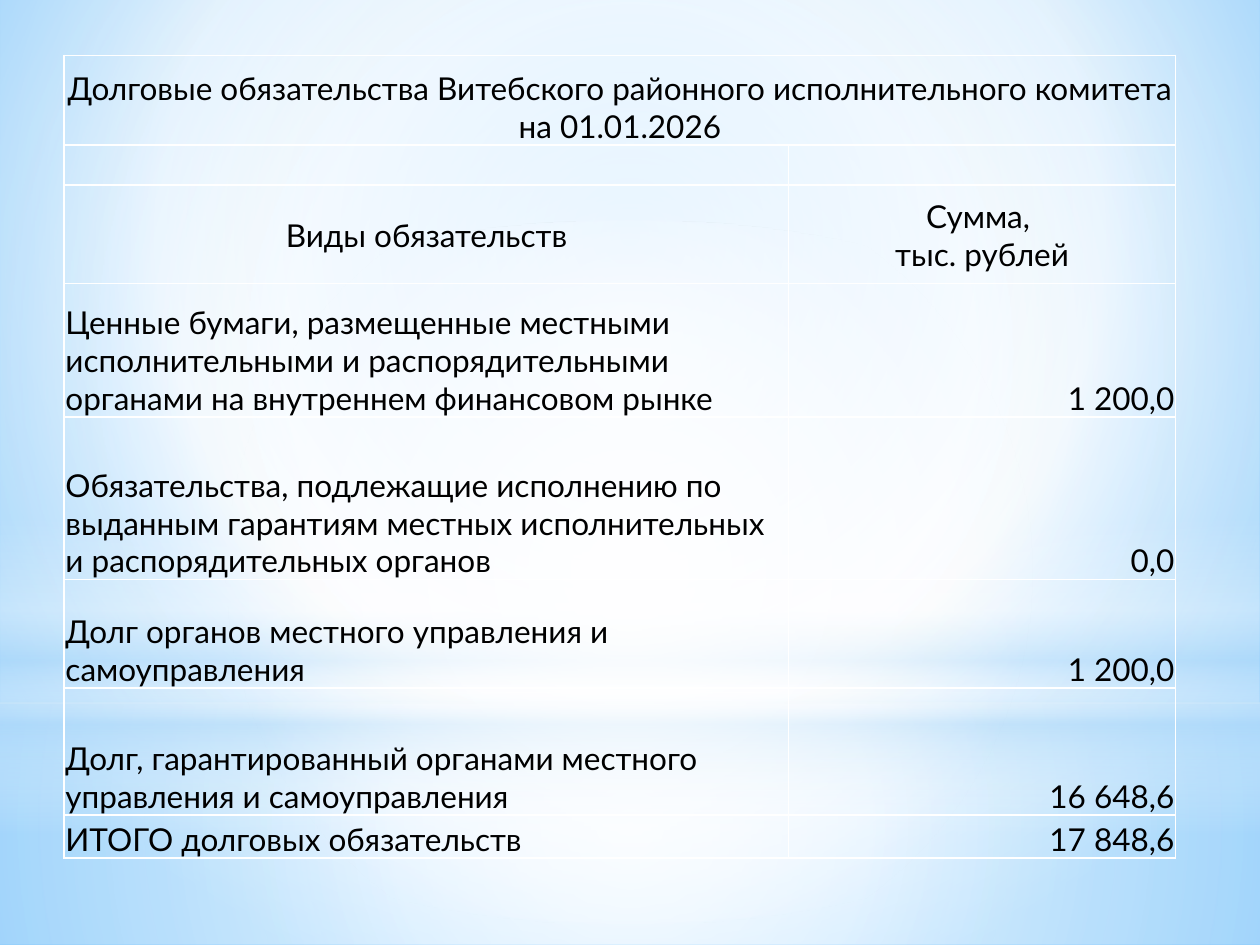
from dataclasses import dataclass

import pptx
import pptx.dml.color
import pptx.enum.shapes
import pptx.enum.text
import pptx.oxml
import pptx.oxml.ns
import pptx.util

PX = 9144  # 100 px to the inch
HUES = {"white": "FFFFFF", "pale": "B4DCFA", "sky": "9ED5FF", "deep": "5BB9FF", "ink": "000000"}
SHAPE = pptx.enum.shapes.MSO_SHAPE
ALIGN = pptx.enum.text.PP_ALIGN
ANCHOR = pptx.enum.text.MSO_ANCHOR
NS = pptx.oxml.ns.nsdecls("a")
MID = (50, 50, 50, 50)


@dataclass
class Stop:
    pos: int
    hue: str
    alpha: int = 100


@dataclass
class Glow:
    kind: int
    top: int
    height: int
    stops: list[Stop]
    focus: tuple[int, ...] | None = MID


@dataclass
class Row:
    height: int
    texts: tuple[str, ...]
    aligns: tuple = (ALIGN.LEFT, ALIGN.RIGHT)
    anchor: int = ANCHOR.BOTTOM


BACK = [Stop(0, "sky"), Stop(60, "white"), Stop(100, "deep")]
GLOWS = [
    Glow(SHAPE.RECTANGLE, 558, 192,
         [Stop(0, "white", 91), Stop(37, "white", 76), Stop(100, "pale", 79)]),
    Glow(SHAPE.RECTANGLE, 0, 558,
         [Stop(0, "white", 89), Stop(48, "white", 62), Stop(100, "pale", 79)]),
    Glow(SHAPE.RECTANGLE, 412, 250,
         [Stop(0, "white", 0), Stop(29, "white", 30), Stop(45, "pale", 40),
          Stop(55, "white", 26), Stop(65, "pale", 60), Stop(100, "white", 0)], None),
    Glow(SHAPE.OVAL, 175, 558, [Stop(0, "white"), Stop(56, "white", 0)]),
]
CENTRE = (ALIGN.CENTER, ALIGN.CENTER)
COLS = (575, 307)
ROWS = [
    Row(71, ("Долговые обязательства Витебского районного исполнительного комитета "
             "на 01.01.2026", ""), CENTRE),
    Row(32, ("", "")),
    Row(78, ("Виды обязательств", "Сумма, \nтыс. рублей"), CENTRE, ANCHOR.MIDDLE),
    Row(106, ("Ценные бумаги, размещенные местными исполнительными и распорядительными "
              "органами на внутреннем финансовом рынке", "1 200,0")),
    Row(129, ("Обязательства, подлежащие исполнению по выданным гарантиям местных "
              "исполнительных и распорядительных органов", "0,0")),
    Row(86, ("Долг органов местного управления и самоуправления", "1 200,0")),
    Row(101, ("Долг, гарантированный органами местного управления и самоуправления",
              "16 648,6")),
    Row(34, ("ИТОГО долговых обязательств", "17 848,6")),
]
FONT = {"name": "Lato", "size": pptx.util.Pt(18), "bold": False}
CELL = {"margin_left": PX, "margin_right": PX, "margin_top": PX, "margin_bottom": 0}


def blend(fill, stops: list[Stop], focus: tuple[int, ...] | None) -> None:
    """Give a fill a gradient: round about the focus, or downward without one."""
    fill.gradient()
    grad = fill._fill._gradFill
    marks = "".join(
        f'<a:gs pos="{s.pos * 1000}"><a:srgbClr val="{HUES[s.hue]}">'
        f'<a:alpha val="{s.alpha * 1000}"/></a:srgbClr></a:gs>' for s in stops)
    if focus:
        sides = " ".join(f'{side}="{n * 1000}"' for side, n in zip("ltrb", focus))
        way = f'<a:path path="circle"><a:fillToRect {sides}/></a:path>'
    else:
        way = '<a:lin ang="5400000" scaled="0"/>'
    new = pptx.oxml.parse_xml(
        f'<a:gradFill {NS} rotWithShape="1"><a:gsLst>{marks}</a:gsLst>{way}</a:gradFill>')
    grad.getparent().replace(grad, new)


def shine(slide, glow: Glow) -> None:
    shape = slide.shapes.add_shape(glow.kind, 0, glow.top * PX, 1000 * PX, glow.height * PX)
    shape.shadow.inherit = False
    shape.line.fill.background()
    blend(shape.fill, glow.stops, glow.focus)


def frame(cell) -> None:
    """Draw thin white borders round a cell and leave it unfilled."""
    props = cell._tc.get_or_add_tcPr()
    for side in ("lnL", "lnR", "lnT", "lnB"):
        props.append(pptx.oxml.parse_xml(
            f'<a:{side} {NS} w="12700"><a:solidFill><a:srgbClr val="{HUES["white"]}"/>'
            f'</a:solidFill></a:{side}>'))
    cell.fill.background()


def write(cell, text: str, align: int, anchor: int) -> None:
    for key, value in CELL.items():
        setattr(cell, key, value)
    cell.vertical_anchor = anchor
    para = cell.text_frame.paragraphs[0]
    para.text = text
    para.alignment = align
    for part in (para, *para.runs):
        for key, value in FONT.items():
            setattr(part.font, key, value)
        part.font.color.rgb = pptx.dml.color.RGBColor.from_string(HUES["ink"])


def tabulate(slide) -> None:
    high = sum(row.height for row in ROWS)
    table = slide.shapes.add_table(
        len(ROWS), len(COLS), 51 * PX, 44 * PX, sum(COLS) * PX, high * PX).table
    table.first_row = table.horz_banding = False
    for col, width in zip(table.columns, COLS):
        col.width = width * PX
    for i, row in enumerate(ROWS):
        table.rows[i].height = row.height * PX
        for j, (text, align) in enumerate(zip(row.texts, row.aligns)):
            cell = table.cell(i, j)
            frame(cell)
            write(cell, text, align, row.anchor)
    table.cell(0, 0).merge(table.cell(0, 1))


def main() -> None:
    deck = pptx.Presentation()
    deck.slide_width, deck.slide_height = 1000 * PX, 750 * PX
    slide = deck.slides.add_slide(deck.slide_layouts[6])
    blend(slide.background.fill, BACK, (20, 10, 20, 60))
    for glow in GLOWS:
        shine(slide, glow)
    tabulate(slide)
    deck.save("out.pptx")


if __name__ == "__main__":
    main()
